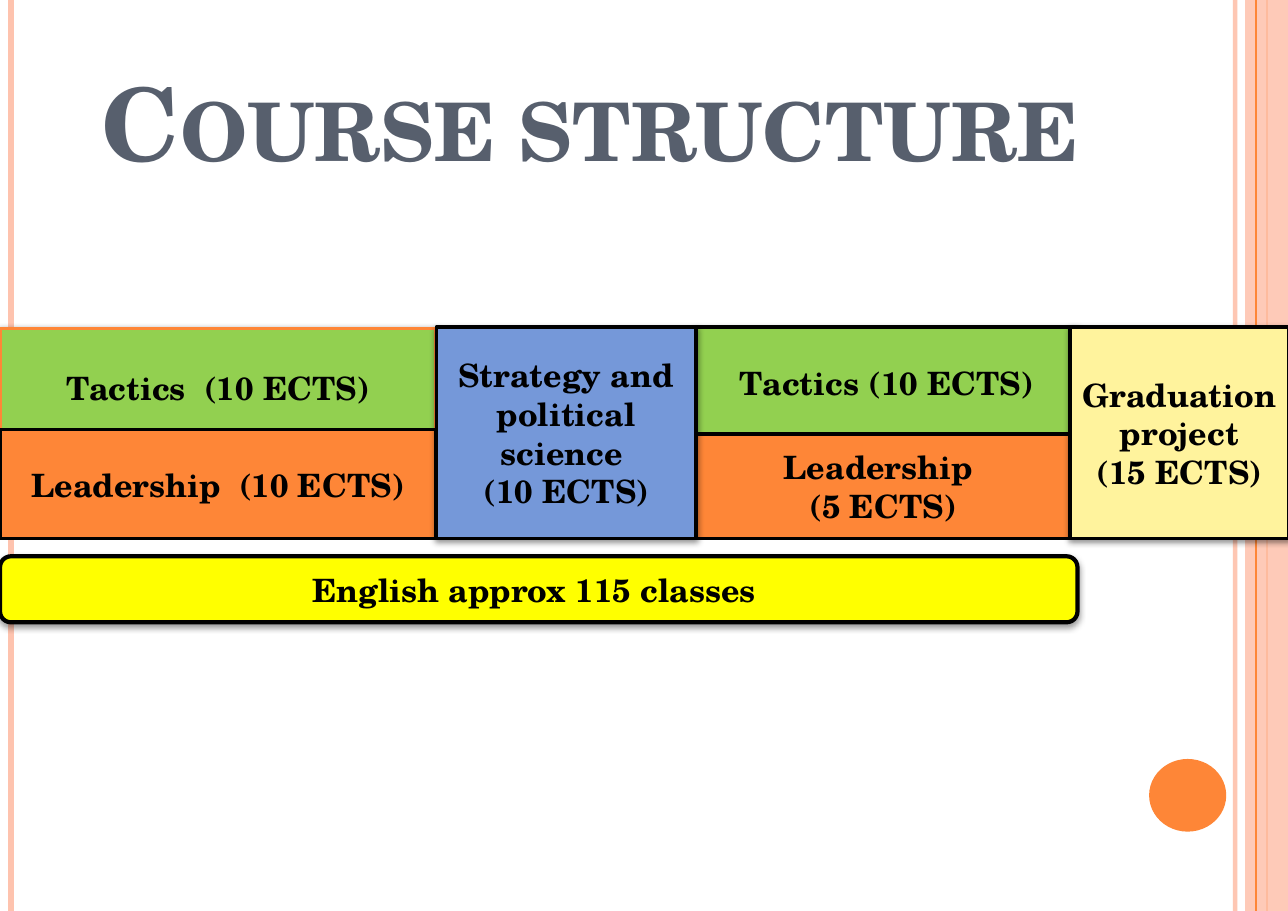
from dataclasses import dataclass

from lxml import etree
from pptx import Presentation
from pptx.dml.color import RGBColor
from pptx.enum.shapes import MSO_CONNECTOR, MSO_SHAPE
from pptx.enum.text import MSO_ANCHOR, PP_ALIGN
from pptx.oxml.ns import qn
from pptx.util import Inches, Pt

RECT, ROUNDED, OVAL = MSO_SHAPE.RECTANGLE, MSO_SHAPE.ROUNDED_RECTANGLE, MSO_SHAPE.OVAL
STRAIGHT = MSO_CONNECTOR.STRAIGHT
MIDDLE, BOTTOM = MSO_ANCHOR.MIDDLE, MSO_ANCHOR.BOTTOM
CENTER = PP_ALIGN.CENTER

FONT = "TeX Gyre Schola"
WIDTH, HEIGHT = 11.69, 8.27
COLORS = {
    "black": "000000",
    "slate": "575F6D",
    "peach": "FEC3AE",
    "orange": "FE8637",
    "green": "92D050",
    "blue": "7598D9",
    "cream": "FFF39D",
    "yellow": "FFFF00",
}


@dataclass
class Stripe:
    x: float
    color: str
    width: float
    opacity: int = 100


@dataclass
class Shadow:
    opacity: int
    distance: float


@dataclass
class Course:
    text: str
    left: float
    top: float
    width: float
    height: float
    fill: str
    line: str = "black"
    line_width: float = 2.25
    shape: int = RECT
    shadow: Shadow | None = None


SOFT = Shadow(42, 1.6)
STRIPES = [
    Stripe(11.21, "peach", 3, 93),
    Stripe(0.1, "peach", 4.5),
    Stripe(11.5, "orange", 1.5),
]
BAND_STRIPE = Stripe(11.4, "orange", 0.75)
COURSES = [
    Course("English approx 115 classes ", 0, 5.05, 9.78, 0.6, "yellow",
           line_width=2.75, shape=ROUNDED, shadow=Shadow(40, 2)),
    Course("Tactics  (10 ECTS)", 0, 2.98, 3.96, 1.08, "green", line="orange", shadow=SOFT),
    Course("Tactics (10 ECTS)", 6.32, 2.97, 3.46, 1.01, "green", shadow=SOFT),
    Course("Leadership  (10 ECTS)", 0, 3.9, 3.96, 0.99, "orange"),
    Course("Leadership \n(5 ECTS)", 6.32, 3.94, 3.39, 0.95, "orange"),
    Course("Strategy and political science \n(10 ECTS)", 3.96, 2.97, 2.36, 1.92,
           "blue", shadow=SOFT),
    Course("Graduation project\n(15 ECTS)", 9.71, 2.97, 1.99, 1.92, "cream", shadow=SOFT),
]


def rgb(name: str) -> RGBColor:
    return RGBColor.from_string(COLORS[name])


def set_opacity(element, percent: int) -> None:
    """Make the first colour found in the element translucent."""
    color = next(element.iter(qn("a:srgbClr")))
    etree.SubElement(color, qn("a:alpha"), val=str(percent * 1000))


def add_stripe(slide, stripe: Stripe) -> None:
    x = Inches(stripe.x)
    s = slide.shapes.add_connector(STRAIGHT, x, 0, x, Inches(HEIGHT))
    s.line.color.rgb = rgb(stripe.color)
    s.line.width = Pt(stripe.width)
    if stripe.opacity < 100:
        set_opacity(s.line._ln, stripe.opacity)
    etree.SubElement(s._element.spPr, qn("a:effectLst"))


def add_plain_shape(slide, kind: int, left: float, top: float,
                    width: float, height: float, fill: str):
    s = slide.shapes.add_shape(kind, Inches(left), Inches(top), Inches(width), Inches(height))
    s.shadow.inherit = False
    s.fill.solid()
    s.fill.fore_color.rgb = rgb(fill)
    s.line.fill.background()
    return s


def drop_shadow(s, shadow: Shadow) -> None:
    effects = s._element.spPr.find(qn("a:effectLst"))
    outer = etree.SubElement(effects, qn("a:outerShdw"), blurRad=str(Pt(4)),
                             dist=str(Pt(shadow.distance)), dir="5400000", rotWithShape="0")
    etree.SubElement(outer, qn("a:srgbClr"), val=COLORS["black"])
    set_opacity(outer, shadow.opacity)


def format_text(tf, size: float, color: str) -> None:
    tf.word_wrap = True
    for p in tf.paragraphs:
        p.alignment = CENTER
        for r in p.runs:
            r.font.name = FONT
            r.font.size = Pt(size)
            r.font.bold = True
            r.font.color.rgb = rgb(color)


def add_course(slide, course: Course) -> None:
    s = add_plain_shape(slide, course.shape, course.left, course.top,
                        course.width, course.height, course.fill)
    s.line.color.rgb = rgb(course.line)
    s.line.width = Pt(course.line_width)
    if course.shadow:
        drop_shadow(s, course.shadow)
    tf = s.text_frame
    tf.text = course.text
    tf.vertical_anchor = MIDDLE
    tf.margin_left = tf.margin_right = Inches(0.08)
    format_text(tf, 21, "black")


def set_title(slide, text: str) -> None:
    title = slide.shapes.title
    title.left, title.top = Inches(0.58), Inches(0.33)
    title.width, title.height = Inches(9.55), Inches(1.38)
    tf = title.text_frame
    tf.text = text
    tf.vertical_anchor = BOTTOM
    tf.margin_left = tf.margin_right = Inches(0.11)
    tf.margin_top = tf.margin_bottom = Inches(0.06)
    format_text(tf, 66, "slate")
    tf.paragraphs[0].runs[0].font._element.set("cap", "small")


def main() -> None:
    prs = Presentation()
    prs.slide_width, prs.slide_height = Inches(WIDTH), Inches(HEIGHT)
    slide = prs.slides.add_slide(prs.slide_layouts[5])
    set_title(slide, "Course structure")
    for stripe in STRIPES:
        add_stripe(slide, stripe)
    band = add_plain_shape(slide, RECT, 11.3, 0, 0.39, HEIGHT, "peach")
    set_opacity(band._element.spPr, 87)
    add_stripe(slide, BAND_STRIPE)
    add_plain_shape(slide, OVAL, 10.43, 6.89, 0.7, 0.66, "orange")
    for course in COURSES:
        add_course(slide, course)
    prs.save("out.pptx")


if __name__ == "__main__":
    main()
